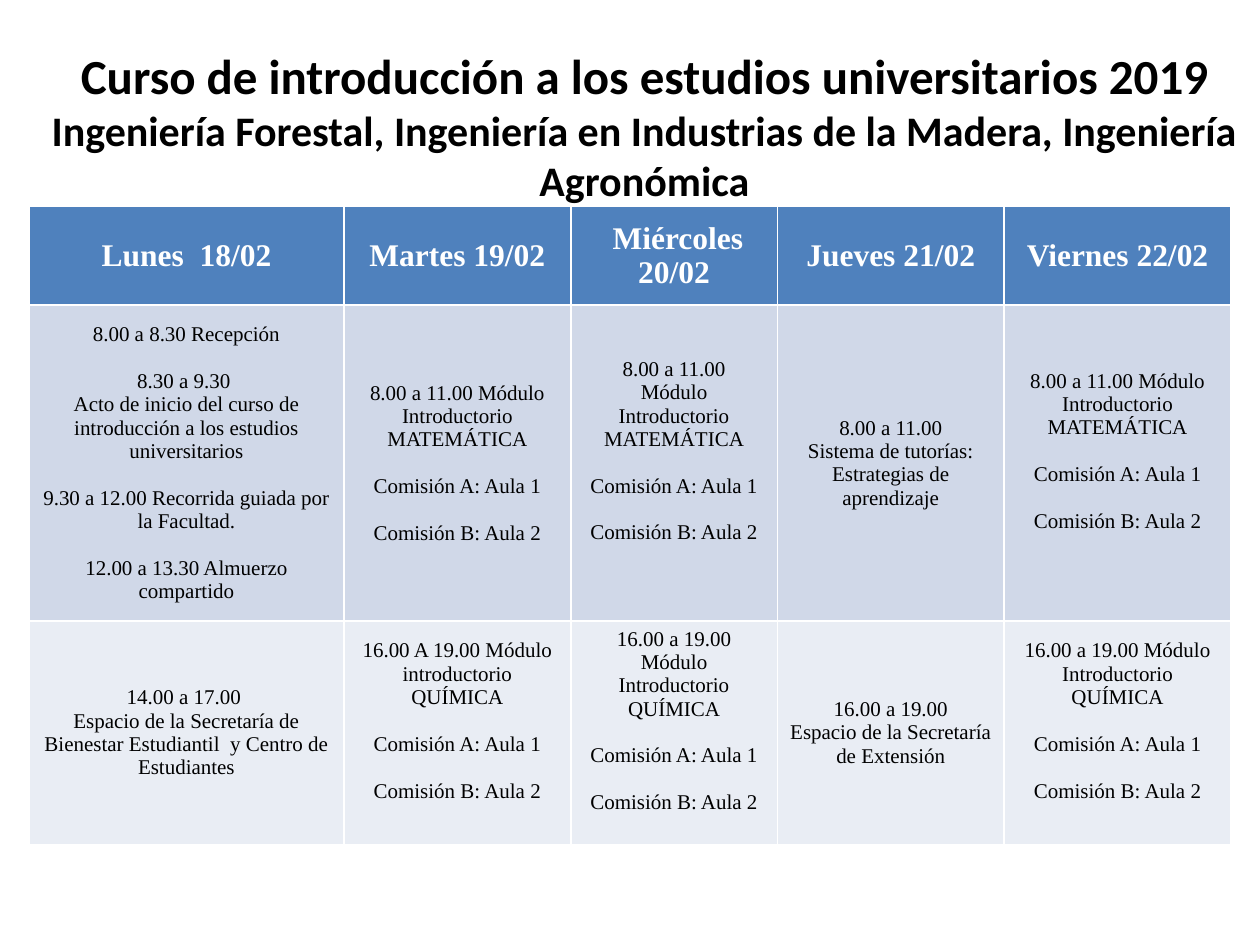
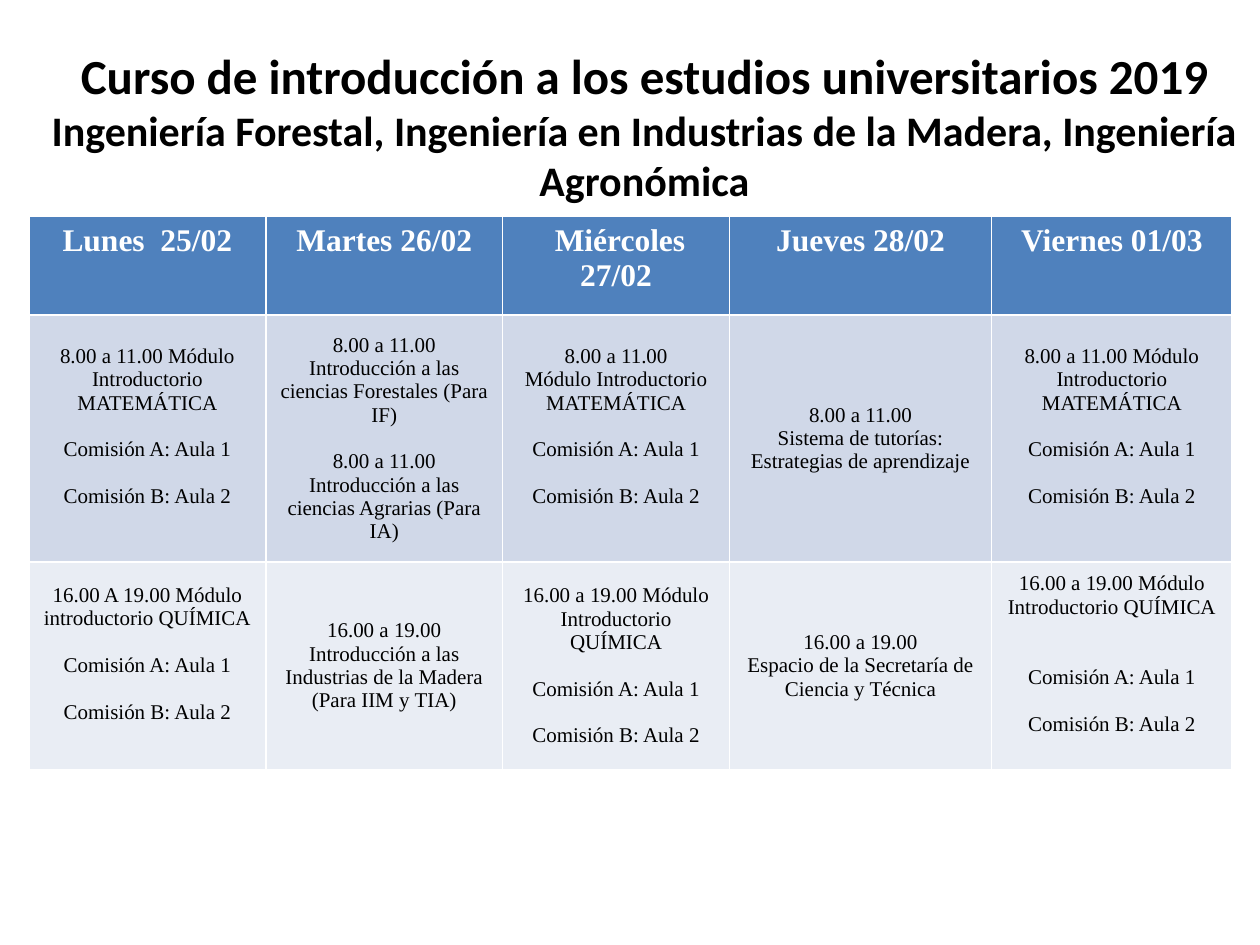
from dataclasses import dataclass

from pptx import Presentation
from pptx.dml.color import RGBColor
from pptx.enum.text import MSO_ANCHOR, MSO_AUTO_SIZE, PP_ALIGN
from pptx.util import Inches, Pt


@dataclass(frozen=True)
class Theme:
    text: str = "000000"
    header_text: str = "FFFFFF"
    row_fills: tuple = ("4F81BD", "D0D8E8", "E9EDF4")
    title_font: str = "Calibri"
    table_font: str = "Times New Roman"
    title_sizes: tuple = (28, 24)
    header_size: int = 18
    body_size: int = 12
    line_height: float = 13.4
    raised_margin: float = 0.24


THEME = Theme()

TITLE = (
    "Curso de introducción a los estudios universitarios 2019",
    "Ingeniería Forestal, Ingeniería en Industrias de la Madera, Ingeniería Agronómica",
)

ROOMS = ("Comisión A: Aula 1", "Comisión B: Aula 2")
MATH = ("8.00 a 11.00 Módulo Introductorio MATEMÁTICA", *ROOMS)
MATH_SPLIT = ("8.00 a 11.00\nMódulo Introductorio MATEMÁTICA", *ROOMS)
CHEMISTRY = ("16.00 a 19.00 Módulo Introductorio QUÍMICA", *ROOMS)
CHEMISTRY_TUESDAY = ("16.00 A 19.00 Módulo introductorio QUÍMICA", *ROOMS)
TUTORING = ("8.00 a 11.00\nSistema de tutorías: Estrategias de aprendizaje",)

WEEKS = [
    {
        "top": 1.64,
        "cols": (2.5, 1.8, 1.64, 1.8, 1.8),
        "rows": (0.78, 2.51, 1.76),
        "header_anchor": MSO_ANCHOR.MIDDLE,
        "days": ("Lunes  18/02", "Martes 19/02", " Miércoles 20/02",
                 "Jueves 21/02", "Viernes 22/02"),
        "morning": (
            (
                "8.00 a 8.30 Recepción",
                "8.30 a 9.30 \nActo de inicio del curso de introducción "
                "a los estudios universitarios",
                "9.30 a 12.00 Recorrida guiada por la Facultad.",
                "12.00 a 13.30 Almuerzo compartido",
            ),
            MATH, MATH_SPLIT, TUTORING, MATH,
        ),
        "afternoon": (
            ("14.00 a 17.00 \nEspacio de la Secretaría de Bienestar "
             "Estudiantil  y Centro de Estudiantes",),
            CHEMISTRY_TUESDAY, CHEMISTRY,
            ("16.00 a 19.00\nEspacio de la Secretaría de Extensión",),
            CHEMISTRY,
        ),
        "raised": {(1, 2), (1, 4), (2, 1), (2, 2), (2, 4)},
        "double_gap": set(),
    },
    {
        "top": 1.72,
        "cols": (1.88, 1.88, 1.8, 2.08, 1.91),
        "rows": (0.78, 1.96, 1.57),
        "header_anchor": MSO_ANCHOR.TOP,
        "days": ("Lunes  25/02", "Martes 26/02", " Miércoles 27/02",
                 "Jueves 28/02", "Viernes 01/03"),
        "morning": (
            MATH,
            (
                "8.00 a 11.00\nIntroducción a las ciencias Forestales (Para IF)",
                "8.00 a 11.00\nIntroducción a las ciencias Agrarias (Para IA)",
            ),
            MATH_SPLIT, TUTORING, MATH,
        ),
        "afternoon": (
            CHEMISTRY_TUESDAY,
            ("16.00 a 19.00\nIntroducción a las Industrias de la Madera "
             "(Para IIM y TIA)",),
            CHEMISTRY,
            ("16.00 a 19.00\nEspacio de la Secretaría de Ciencia y Técnica",),
            CHEMISTRY,
        ),
        "raised": {(1, 0), (1, 2), (1, 4), (2, 0), (2, 4)},
        "double_gap": {(2, 4)},
    },
]


def format_paragraph(p, font, size, color, bold):
    p.alignment = PP_ALIGN.CENTER
    for r in p.runs:
        r.font.name = font
        r.font.size = Pt(size)
        r.font.bold = bold
        r.font.color.rgb = RGBColor.from_string(color)


def add_title(s):
    sp = s.shapes.add_textbox(Inches(0.23), Inches(0.31), Inches(9.77), Inches(1.38))
    tf = sp.text_frame
    tf.word_wrap = True
    tf.auto_size = MSO_AUTO_SIZE.SHAPE_TO_FIT_TEXT
    tf.text = "\n".join(TITLE)
    for p, size in zip(tf.paragraphs, THEME.title_sizes):
        format_paragraph(p, THEME.title_font, size, THEME.text, True)


def fill_header(cell, day, anchor):
    cell.vertical_anchor = anchor
    cell.text_frame.text = day
    format_paragraph(cell.text_frame.paragraphs[0], THEME.table_font,
                     THEME.header_size, THEME.header_text, True)


def fill_activity(cell, groups, raised, double_gap):
    cell.vertical_anchor = MSO_ANCHOR.MIDDLE
    if raised:
        cell.margin_bottom = Inches(THEME.raised_margin)
    tf = cell.text_frame
    tf.text = "\n".join(groups)
    starts = []
    for group in groups:
        starts += [True] + [False] * group.count("\n")
    for i, (p, starts_group) in enumerate(zip(tf.paragraphs, starts)):
        format_paragraph(p, THEME.table_font, THEME.body_size, THEME.text, False)
        if i and starts_group:
            lines = 2 if double_gap and i == 1 else 1
            p.space_before = Pt(THEME.line_height * lines)


def add_schedule(s, week):
    widths, heights = week["cols"], week["rows"]
    table = s.shapes.add_table(
        len(heights), len(widths), Inches(0.23), Inches(week["top"]),
        Inches(sum(widths)), Inches(sum(heights))).table
    for col, width in zip(table.columns, widths):
        col.width = Inches(width)
    for row, height in zip(table.rows, heights):
        row.height = Inches(height)
    for c, day in enumerate(week["days"]):
        fill_header(table.cell(0, c), day, week["header_anchor"])
    for r, part in enumerate(("morning", "afternoon"), 1):
        for c, groups in enumerate(week[part]):
            fill_activity(table.cell(r, c), groups, (r, c) in week["raised"],
                          (r, c) in week["double_gap"])
    for row, color in zip(table.rows, THEME.row_fills):
        for cell in row.cells:
            cell.fill.solid()
            cell.fill.fore_color.rgb = RGBColor.from_string(color)


def main():
    prs = Presentation()
    prs.slide_width, prs.slide_height = Inches(10), Inches(7.5)
    for week in WEEKS:
        s = prs.slides.add_slide(prs.slide_layouts[6])
        add_schedule(s, week)
        add_title(s)
    prs.save("out.pptx")


if __name__ == "__main__":
    main()
